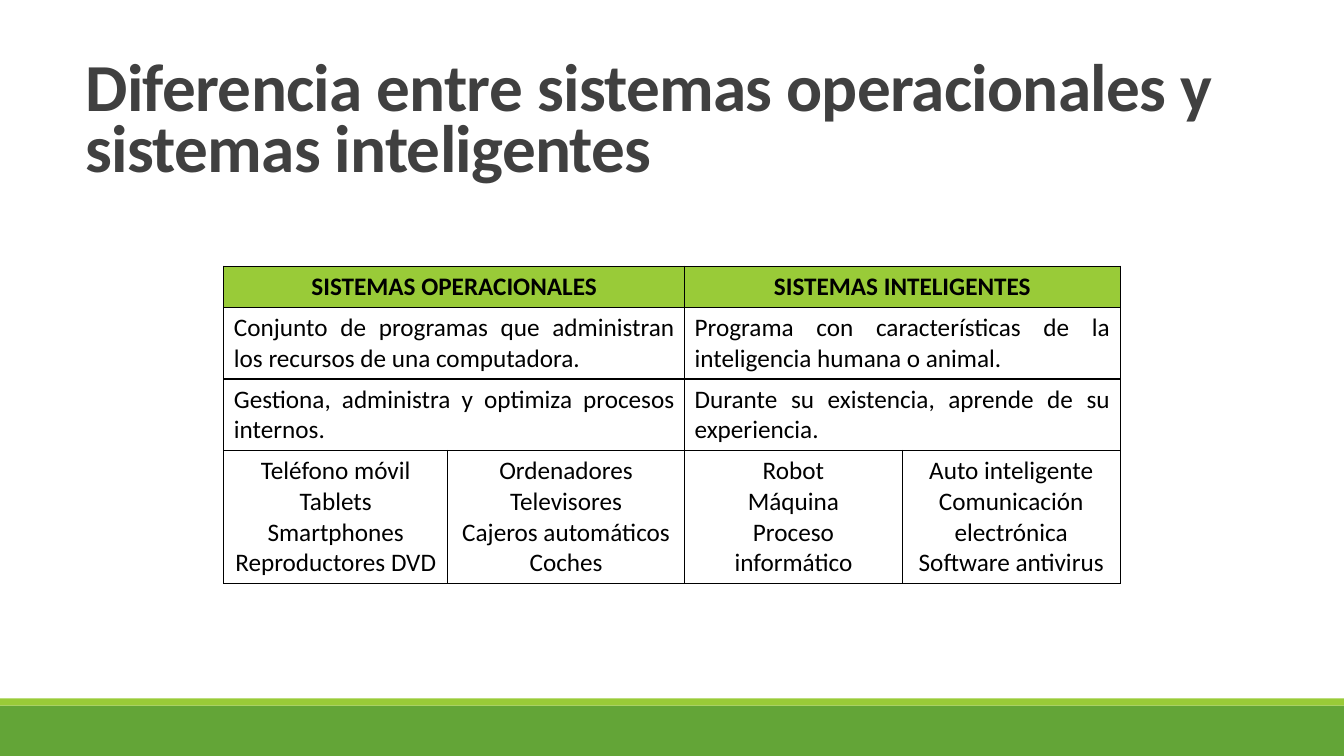
"""Build a slide comparing operating systems with intelligent systems."""
from lxml.etree import SubElement
from pptx import Presentation
from pptx.dml.color import RGBColor
from pptx.enum.shapes import MSO_SHAPE
from pptx.enum.text import MSO_ANCHOR, PP_ALIGN
from pptx.oxml.ns import qn
from pptx.util import Inches, Pt

COLORS = {"green": "63A537", "lime": "99CB38", "title": "404040",
          "black": "000000", "white": "FFFFFF"}
TITLE = "Diferencia entre sistemas operacionales y sistemas inteligentes"
WIDTHS = [2.22, 2.35, 2.16, 2.16]
HEIGHTS = [0.41, 0.71, 0.71, 1.32]
PAIRS = [
    ("SISTEMAS OPERACIONALES", "SISTEMAS INTELIGENTES"),
    ("Conjunto de programas que administran los recursos de una computadora.",
     "Programa con características de la inteligencia humana o animal."),
    ("Gestiona, administra y optimiza procesos internos.",
     "Durante su existencia, aprende de su experiencia."),
]
SAMPLES = [
    "Teléfono móvil\nTablets\nSmartphones\nReproductores DVD",
    "Ordenadores\nTelevisores\nCajeros automáticos\nCoches",
    "Robot\nMáquina\nProceso informático",
    "Auto inteligente\nComunicación electrónica\nSoftware antivirus",
]


class Board:
    def __init__(self, slide, face="Calibri"):
        self.slide = slide
        self.face = face

    def color(self, name):
        return RGBColor.from_string(COLORS[name])

    def style(self, para, size, color, bold):
        font = para.font
        font.name, font.size, font.bold = self.face, Pt(size), bold
        font.color.rgb = self.color(color)

    def band(self, top, height, color):
        bar = self.slide.shapes.add_shape(
            MSO_SHAPE.RECTANGLE, 0, Inches(top), Inches(13.33), Inches(height))
        bar.shadow.inherit = False
        bar.fill.solid()
        bar.fill.fore_color.rgb = self.color(color)
        bar.line.fill.background()

    def title(self, text, left, top, width, height):
        box = self.slide.shapes.add_textbox(*map(Inches, (left, top, width, height)))
        frame = box.text_frame
        frame.word_wrap = True
        frame.vertical_anchor = MSO_ANCHOR.MIDDLE
        para = frame.paragraphs[0]
        para.text = text
        para.line_spacing = 0.75
        self.style(para, 48, "title", True)
        para.runs[0]._r.get_or_add_rPr().set("spc", "-50")

    def border(self, cell):
        props = cell._tc.get_or_add_tcPr()
        for place, side in enumerate(("lnL", "lnR", "lnT", "lnB")):
            line = props.makeelement(qn(f"a:{side}"), {"w": str(Pt(1))})
            fill = SubElement(line, qn("a:solidFill"))
            SubElement(fill, qn("a:srgbClr"), val=COLORS["black"])
            props.insert(place, line)

    def label(self, cell, text, align, bold):
        cell.text = text
        for para in cell.text_frame.paragraphs:
            para.alignment = align
            self.style(para, 18, "black", bold)

    def table(self, left, top):
        grid = self.slide.shapes.add_table(
            len(HEIGHTS), len(WIDTHS), Inches(left), Inches(top),
            Inches(sum(WIDTHS)), Inches(sum(HEIGHTS))).table
        for col, width in zip(grid.columns, WIDTHS):
            col.width = Inches(width)
        for index, (row, height) in enumerate(zip(grid.rows, HEIGHTS)):
            row.height = Inches(height)
            for cell in row.cells:
                cell.fill.solid()
                cell.fill.fore_color.rgb = self.color("white" if index else "lime")
                self.border(cell)
        for index, pair in enumerate(PAIRS):
            align = PP_ALIGN.JUSTIFY if index else PP_ALIGN.CENTER
            for side, text in enumerate(pair):
                cell = grid.cell(index, 2 * side)
                cell.merge(grid.cell(index, 2 * side + 1))
                self.label(cell, text, align, index == 0)
        for index, text in enumerate(SAMPLES):
            self.label(grid.cell(len(PAIRS), index), text, PP_ALIGN.CENTER, False)


def main():
    deck = Presentation()
    deck.slide_width, deck.slide_height = Inches(13.33), Inches(7.5)
    board = Board(deck.slides.add_slide(deck.slide_layouts[6]))
    board.band(7, 0.5, "green")
    board.band(6.93, 0.07, "lime")
    board.title(TITLE, 0.75, 0.51, 11.82, 1.44)
    board.table(2.22, 2.64)
    deck.save("out.pptx")


if __name__ == "__main__":
    main()
